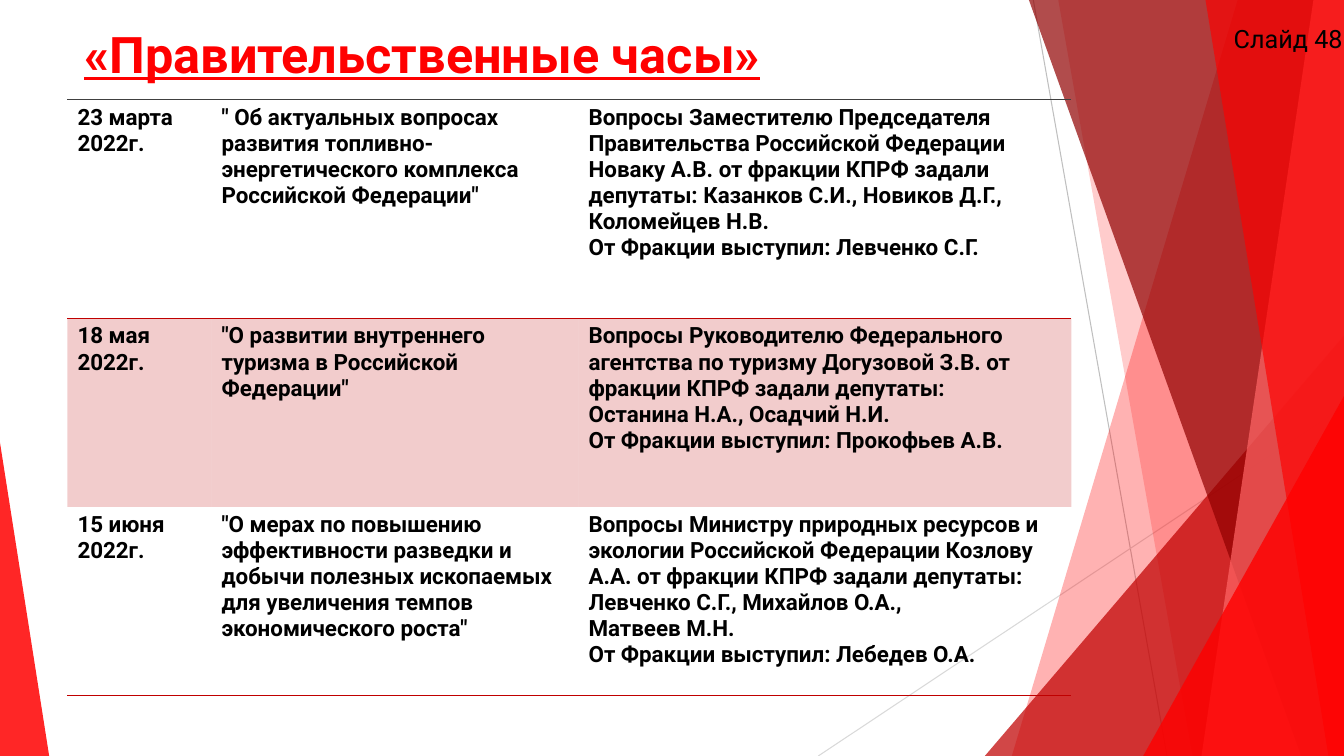
from dataclasses import dataclass

from lxml import etree
from pptx import Presentation
from pptx import util as u
from pptx.dml import color
from pptx.enum import shapes, text
from pptx.oxml import ns

Cm, Pt = u.Cm, u.Pt
WIDTH, HEIGHT = 33.87, 19.05


@dataclass(frozen=True)
class Theme:
    font: str = "Roboto"
    black: str = "000000"
    red: str = "FF0000"
    crimson: str = "C00000"
    maroon: str = "900000"
    coral: str = "FF6666"
    rule: str = "404040"
    gray: str = "BFBFBF"
    light_gray: str = "D9D9D9"
    title_size: int = 36
    label_size: int = 18
    table_size: int = 16


THEME = Theme()
TITLE_FORMAT = {"size": Pt(THEME.title_size), "bold": True, "underline": True}
LABEL_FORMAT = {"size": Pt(THEME.label_size)}
CELL_FORMAT = {"size": Pt(THEME.table_size), "bold": True}

# Thin lines: start x, start y, end x, end y, colour
LINES = [
    (26.04, 0, 29.41, HEIGHT, THEME.gray),
    (WIDTH, 10.24, 20.62, HEIGHT, THEME.light_gray),
]

# Facets from back to front. A band gives its left edge (top x, bottom x);
# a triangle gives left, top and the position of its apex (0 left, 1 right), width.
FACETS = [
    ("band", (31.19, 25.5), THEME.red, 30),
    ("band", (26.67, 30.05), THEME.red, 20),
    ("triangle", (24.82, 8.46, 9.05, 1), THEME.crimson, 72),
    ("band", (25.93, 32.79), THEME.maroon, 70),
    ("band", (33.1, 30.28), THEME.coral, 70),
    ("band", (30.38, 33.48), THEME.red, 65),
    ("triangle", (28.81, 9.98, 5.06, 1), THEME.red, 80),
    ("triangle", (0, 11.15, 1.24, 0), THEME.red, 85),
]

COLUMN_WIDTHS = [3.63, 9.25, 12.42]
ROW_HEIGHTS = [5.51, 4.75, 4.75]
ROW_RULES = [THEME.rule, THEME.crimson, None, THEME.crimson]
SHADED_ROW = 1
HOURS = [
    (
        "23 марта 2022г.",
        "\" Об актуальных вопросах развития топливно-энергетического комплекса "
        "Российской Федерации\"",
        "Вопросы Заместителю Председателя Правительства Российской Федерации "
        "Новаку А.В. от фракции КПРФ задали депутаты: Казанков С.И., "
        "Новиков Д.Г., Коломейцев Н.В.\n"
        "От Фракции выступил: Левченко С.Г.",
    ),
    (
        "18 мая 2022г.",
        "\"О развитии внутреннего туризма в Российской Федерации\"",
        "Вопросы Руководителю Федерального агентства по туризму "
        "Догузовой З.В. от фракции КПРФ задали депутаты:\n"
        "Останина Н.А., Осадчий Н.И.\n"
        "От Фракции выступил: Прокофьев А.В.",
    ),
    (
        "15 июня 2022г.",
        "\"О мерах по повышению эффективности разведки и добычи полезных "
        "ископаемых для увеличения темпов экономического роста\"",
        "Вопросы Министру природных ресурсов и экологии Российской Федерации "
        "Козлову А.А. от фракции КПРФ задали депутаты: "
        "Левченко С.Г., Михайлов О.А.,\n"
        "Матвеев М.Н.\n"
        "От Фракции выступил: Лебедев О.А.",
    ),
]


def rgb(value):
    return color.RGBColor.from_string(value)


def set_fill(fill, value, opacity):
    fill.solid()
    fill.fore_color.rgb = rgb(value)
    srgb = fill._xPr.find(".//" + ns.qn("a:srgbClr"))
    etree.SubElement(srgb, ns.qn("a:alpha"), val=str(opacity * 1000))


def write_text(frame, content, font_format, font_color):
    frame.text = content
    frame.word_wrap = True
    for paragraph in frame.paragraphs:
        paragraph.alignment = text.PP_ALIGN.LEFT
        for run in paragraph.runs:
            for name, value in font_format.items():
                setattr(run.font, name, value)
            run.font.name = THEME.font
            run.font.color.rgb = rgb(font_color)


def add_text(slide, box, content, font_format, font_color):
    shape = slide.shapes.add_textbox(*map(Cm, box))
    write_text(shape.text_frame, content, font_format, font_color)


def add_line(slide, start_x, start_y, end_x, end_y, line_color):
    ends = map(Cm, (start_x, start_y, end_x, end_y))
    line = slide.shapes.add_connector(shapes.MSO_CONNECTOR.STRAIGHT, *ends)
    line.line.color.rgb = rgb(line_color)
    line.line.width = Pt(0.75)
    etree.SubElement(line._element.spPr, ns.qn("a:effectLst"))


def add_band(slide, top_x, bottom_x):
    builder = slide.shapes.build_freeform(Cm(top_x), Cm(0))
    corners = [(WIDTH, 0), (WIDTH, HEIGHT), (bottom_x, HEIGHT)]
    builder.add_line_segments([(Cm(x), Cm(y)) for x, y in corners], close=True)
    return builder.convert_to_shape()


def add_triangle(slide, left, top, width, apex):
    box = map(Cm, (left, top, width, HEIGHT - top))
    shape = slide.shapes.add_shape(shapes.MSO_SHAPE.ISOSCELES_TRIANGLE, *box)
    shape.adjustments[0] = apex
    return shape


def add_facet(slide, kind, geometry, fill_color, opacity):
    add_outline = {"band": add_band, "triangle": add_triangle}[kind]
    shape = add_outline(slide, *geometry)
    shape.shadow.inherit = False
    shape.line.fill.background()
    set_fill(shape.fill, fill_color, opacity)


def set_borders(cell, top, bottom):
    properties = cell._tc.get_or_add_tcPr()
    borders = {"lnL": None, "lnR": None, "lnT": top, "lnB": bottom}
    for index, (side, border_color) in enumerate(borders.items()):
        border = etree.Element(ns.qn(f"a:{side}"), w=str(Pt(1)))
        if border_color:
            fill = etree.SubElement(border, ns.qn("a:solidFill"))
            etree.SubElement(fill, ns.qn("a:srgbClr"), val=border_color)
        else:
            etree.SubElement(border, ns.qn("a:noFill"))
        properties.insert(index, border)


def add_hours_table(slide, left, top):
    size = Cm(sum(COLUMN_WIDTHS)), Cm(sum(ROW_HEIGHTS))
    frame = slide.shapes.add_table(
        len(HOURS), len(COLUMN_WIDTHS), Cm(left), Cm(top), *size)
    table = frame.table
    table.first_row = table.horz_banding = False
    for column, width in zip(table.columns, COLUMN_WIDTHS):
        column.width = Cm(width)
    for index, (row, contents) in enumerate(zip(table.rows, HOURS)):
        row.height = Cm(ROW_HEIGHTS[index])
        for cell, content in zip(row.cells, contents):
            write_text(cell.text_frame, content, CELL_FORMAT, THEME.black)
            if index == SHADED_ROW:
                set_fill(cell.fill, THEME.crimson, 20)
            else:
                cell.fill.background()
            set_borders(cell, *ROW_RULES[index:index + 2])


def main():
    presentation = Presentation()
    presentation.slide_width, presentation.slide_height = Cm(WIDTH), Cm(HEIGHT)
    slide = presentation.slides.add_slide(presentation.slide_layouts[6])

    # Background decoration
    for line in LINES:
        add_line(slide, *line)
    for facet in FACETS:
        add_facet(slide, *facet)

    # Title, table and slide label
    add_text(slide, (1.88, 0.46, 23.88, 3.66), "«Правительственные часы»",
             TITLE_FORMAT, THEME.red)
    add_hours_table(slide, 1.7, 2.51)
    add_text(slide, (30.84, 0.46, 4.06, 1.02), "Слайд 48",
             LABEL_FORMAT, THEME.black)

    presentation.save("out.pptx")


if __name__ == "__main__":
    main()
